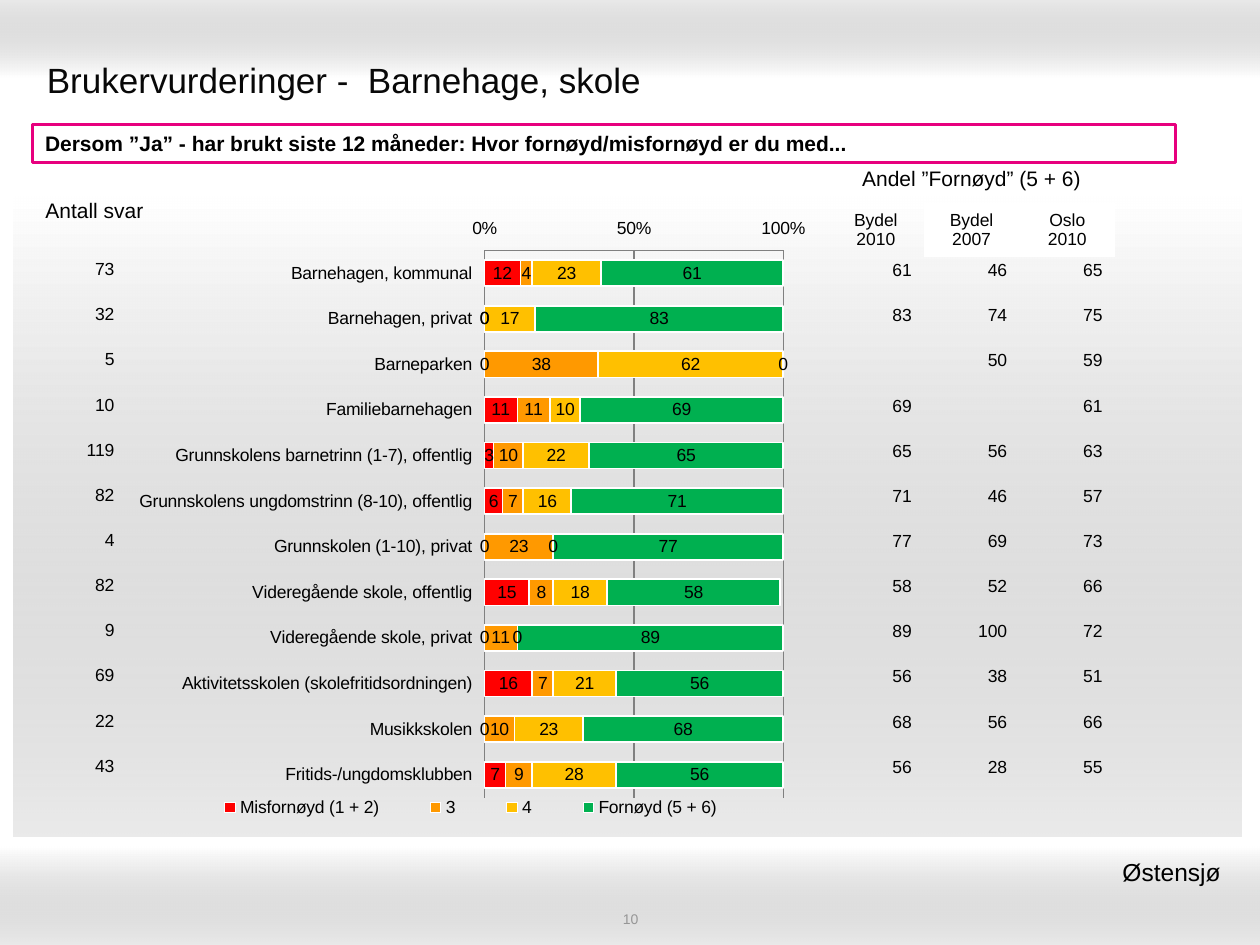
from dataclasses import dataclass

from lxml import etree
from pptx import Presentation
from pptx.chart.data import CategoryChartData
from pptx.dml.color import RGBColor
from pptx.enum.chart import XL_CHART_TYPE, XL_LABEL_POSITION, XL_LEGEND_POSITION
from pptx.enum.chart import XL_TICK_LABEL_POSITION, XL_TICK_MARK
from pptx.enum.shapes import MSO_SHAPE
from pptx.enum.text import MSO_ANCHOR, PP_ALIGN
from pptx.oxml import parse_xml
from pptx.oxml.ns import nsdecls, qn
from pptx.util import Cm, Pt

LEFT, MID, RIGHT = PP_ALIGN.LEFT, PP_ALIGN.CENTER, PP_ALIGN.RIGHT
LOW = XL_TICK_LABEL_POSITION.LOW
NO_TICK, TICK_IN = XL_TICK_MARK.NONE, XL_TICK_MARK.INSIDE
PLAIN = "{2D5ABB26-0587-4C30-8999-92F81FD0307C}"


@dataclass(frozen=True)
class Theme:
    font: str = "Arial"
    black: RGBColor = RGBColor(0, 0, 0)
    ink: RGBColor = RGBColor(0x08, 0x08, 0x08)
    white: RGBColor = RGBColor(0xFF, 0xFF, 0xFF)
    grey: RGBColor = RGBColor(0x99, 0x99, 0x99)
    pale: RGBColor = RGBColor(0x96, 0x96, 0x96)
    axis: RGBColor = RGBColor(0x80, 0x80, 0x80)
    pink: RGBColor = RGBColor(0xE7, 0x00, 0x7E)
    head: int = 20
    place: int = 14
    label: int = 12
    body: int = 10
    small: int = 8


theme = Theme()


def write(frame, text, size, align=LEFT, color=theme.black, bold=False):
    """Put text, one paragraph a line, into a frame centred on its height."""
    frame.text = text
    frame.word_wrap = True
    frame.vertical_anchor = MSO_ANCHOR.MIDDLE
    for para in frame.paragraphs:
        para.alignment = align
        font = para.font
        font.name, font.size, font.bold = theme.font, Pt(size), bold
        font.color.rgb = color


def add_grid(box, heights, rows, align, sizes):
    """Add an unstyled table with equal columns."""
    grid = shapes.add_table(len(rows), len(rows[0]), *map(Cm, box)).table
    grid.first_row = grid.horz_banding = False
    grid._tbl.tblPr.find(qn("a:tableStyleId")).text = PLAIN
    for row, height, texts, size in zip(grid.rows, heights, rows, sizes):
        row.height = Cm(height)
        for cell, text in zip(row.cells, texts):
            cell.margin_top = cell.margin_bottom = Cm(0.05)
            cell.fill.background()
            write(cell.text_frame, str(text), size, align)
            cell.vertical_anchor = MSO_ANCHOR.MIDDLE
    return grid


# Category, answers, chart values, satisfied share (district 2010, 2007, city)
items = [
    ("Barnehagen, kommunal", 73, (12, 4, 23, 61), (61, 46, 65)),
    ("Barnehagen, privat", 32, (0, 0, 17, 83), (83, 74, 75)),
    ("Barneparken", 5, (0, 38, 62, 0), ("", 50, 59)),
    ("Familiebarnehagen", 10, (11, 11, 10, 69), (69, "", 61)),
    ("Grunnskolens barnetrinn (1-7), offentlig", 119, (3, 10, 22, 65), (65, 56, 63)),
    ("Grunnskolens ungdomstrinn (8-10), offentlig", 82, (6, 7, 16, 71), (71, 46, 57)),
    ("Grunnskolen (1-10), privat", 4, (0, 23, 0, 77), (77, 69, 73)),
    ("Videregående skole, offentlig", 82, (15, 8, 18, 58), (58, 52, 66)),
    ("Videregående skole, privat", 9, (0, 11, 0, 89), (89, 100, 72)),
    ("Aktivitetsskolen (skolefritidsordningen)", 69, (16, 7, 21, 56), (56, 38, 51)),
    ("Musikkskolen", 22, (0, 10, 23, 68), (68, 56, 66)),
    ("Fritids-/ungdomsklubben", 43, (7, 9, 28, 56), (56, 28, 55)),
]
names, counts, values, shares = zip(*items)
levels = [
    ("Misfornøyd (1 + 2)", "FF0000"),
    ("3", "FF9900"),
    ("4", "FFC000"),
    ("Fornøyd (5 + 6)", "00B050"),
]

deck = Presentation()
deck.slide_width, deck.slide_height = Cm(25.4), Cm(19.05)
slide = deck.slides.add_slide(deck.slide_layouts[5])
shapes = slide.shapes

# Grey bands, fading from white to a translucent grey
bands = [
    ((0, 0, 25.4, 1.57), 90),
    ((0, 17.07, 25.4, 1.98), 270),
    ((0.28, 3.96, 24.74, 12.9), 270),
]
for box, angle in bands:
    band = shapes.add_shape(MSO_SHAPE.RECTANGLE, *map(Cm, box))
    band.shadow.inherit = False
    band.line.fill.background()
    band.fill.gradient()
    band.fill.gradient_angle = angle
    for stop, color, spot in zip(band.fill.gradient_stops, (theme.white, theme.grey), (0, 1)):
        stop.color.rgb = color
        stop.position = spot
    tint = band._element.spPr.findall(".//" + qn("a:srgbClr"))[-1]
    etree.SubElement(tint, qn("a:alpha")).set("val", "20000")

# Title, raised above the bands
title = shapes.title
title.left, title.top, title.width, title.height = map(Cm, (0.69, 0.91, 24, 1.4))
write(title.text_frame, "Brukervurderinger -  Barnehage, skole", theme.head, color=theme.ink)
shapes._spTree.append(title._element)

# Question
ask = shapes.add_shape(MSO_SHAPE.RECTANGLE, *map(Cm, (0.66, 2.51, 23.04, 0.77)))
ask.shadow.inherit = False
ask.fill.solid()
ask.fill.fore_color.rgb = theme.white
ask.line.color.rgb = theme.pink
ask.line.width = Pt(2)
write(ask.text_frame,
      "Dersom ”Ja” - har brukt siste 12 måneder: Hvor fornøyd/misfornøyd er du med...",
      theme.label, bold=True)

# Chart
data = CategoryChartData(number_format="0")
data.categories = names
for (name, _), column in zip(levels, zip(*values)):
    data.add_series(name, column)
chart = shapes.add_chart(XL_CHART_TYPE.BAR_STACKED,
                         *map(Cm, (2.49, 4.14, 14, 12.98)), data).chart
chart.has_title = False
chart.font.name, chart.font.size = theme.font, Pt(theme.body)
chart.font.color.rgb = theme.black
plot = chart.plots[0]
plot.gap_width, plot.overlap = 75, 100
plot.vary_by_categories = False
for series, (_, color) in zip(plot.series, levels):
    series.format.fill.solid()
    series.format.fill.fore_color.rgb = RGBColor.from_string(color)
    series.format.line.color.rgb = theme.white
    series.format.line.width = Pt(1)
    labels = series.data_labels
    labels.show_value = True
    labels.number_format, labels.number_format_is_linked = "0", False
    labels.position = XL_LABEL_POSITION.CENTER

cats, scale = chart.category_axis, chart.value_axis
cats.reverse_order = True
scale.minimum_scale, scale.maximum_scale, scale.major_unit = 0, 100, 50
scale.has_major_gridlines = True
scale.major_gridlines.format.line.color.rgb = theme.axis
scale.tick_labels.number_format = r"General\%"
scale.tick_labels.number_format_is_linked = False
for axis, tick in ((cats, NO_TICK), (scale, TICK_IN)):
    axis.tick_label_position = LOW
    axis.major_tick_mark, axis.minor_tick_mark = tick, NO_TICK
    axis.format.line.color.rgb = theme.axis

chart.has_legend = True
legend = chart.legend
legend.position = XL_LEGEND_POSITION.BOTTOM
legend.include_in_layout = False
area = chart._chartSpace.chart.plotArea
for part, spot, inner, frame in (
    (area, 0, '<c:layoutTarget val="inner"/>', (0.52, 0.07, 0.43, 0.85)),
    (legend._element, 1, "", (0.08, 0.91, 0.84, 0.05)),
):
    for old in part.findall(qn("c:layout")):
        part.remove(old)
    sides = "".join(f'<c:{key} val="{num}"/>' for key, num in zip("xywh", frame))
    modes = '<c:xMode val="edge"/><c:yMode val="edge"/>'
    part.insert(spot, parse_xml(
        f'<c:layout {nsdecls("c")}><c:manualLayout>{inner}{modes}{sides}'
        "</c:manualLayout></c:layout>"))

# Tables beside the chart
high, sizes = [0.91] * len(items), [theme.body] * len(items)
add_grid((16.71, 5, 5.77, 10.92), high, shares, RIGHT, sizes)
heads = add_grid((16.69, 3.15, 5.79, 2.03), (0.94, 1.09),
                 [("Andel ”Fornøyd” (5 + 6)", "", ""),
                  ("Bydel\n2010", "Bydel\n2007", "Oslo\n2010")],
                 MID, (theme.label, theme.body))
heads.cell(0, 0).merge(heads.cell(0, 2))
for col in (1, 2):
    fill = heads.cell(1, col).fill
    fill.solid()
    fill.fore_color.rgb = theme.white
add_grid((0.1, 3.51, 3.61, 1.5), [1.5], [("Antall svar",)], MID, [theme.label])
add_grid((0.76, 4.98, 1.8, 10.92), high, [(num,) for num in counts], RIGHT, sizes)

# Place and page number
for box, text, size, align, color in (
    ((15.49, 17.15, 9.37, 0.86), "Østensjø", theme.place, RIGHT, theme.black),
    ((8.69, 18.34, 8.05, 0.36), "10", theme.small, MID, theme.pale),
):
    note = shapes.add_textbox(*map(Cm, box)).text_frame
    write(note, text, size, align, color)

deck.save("out.pptx")
